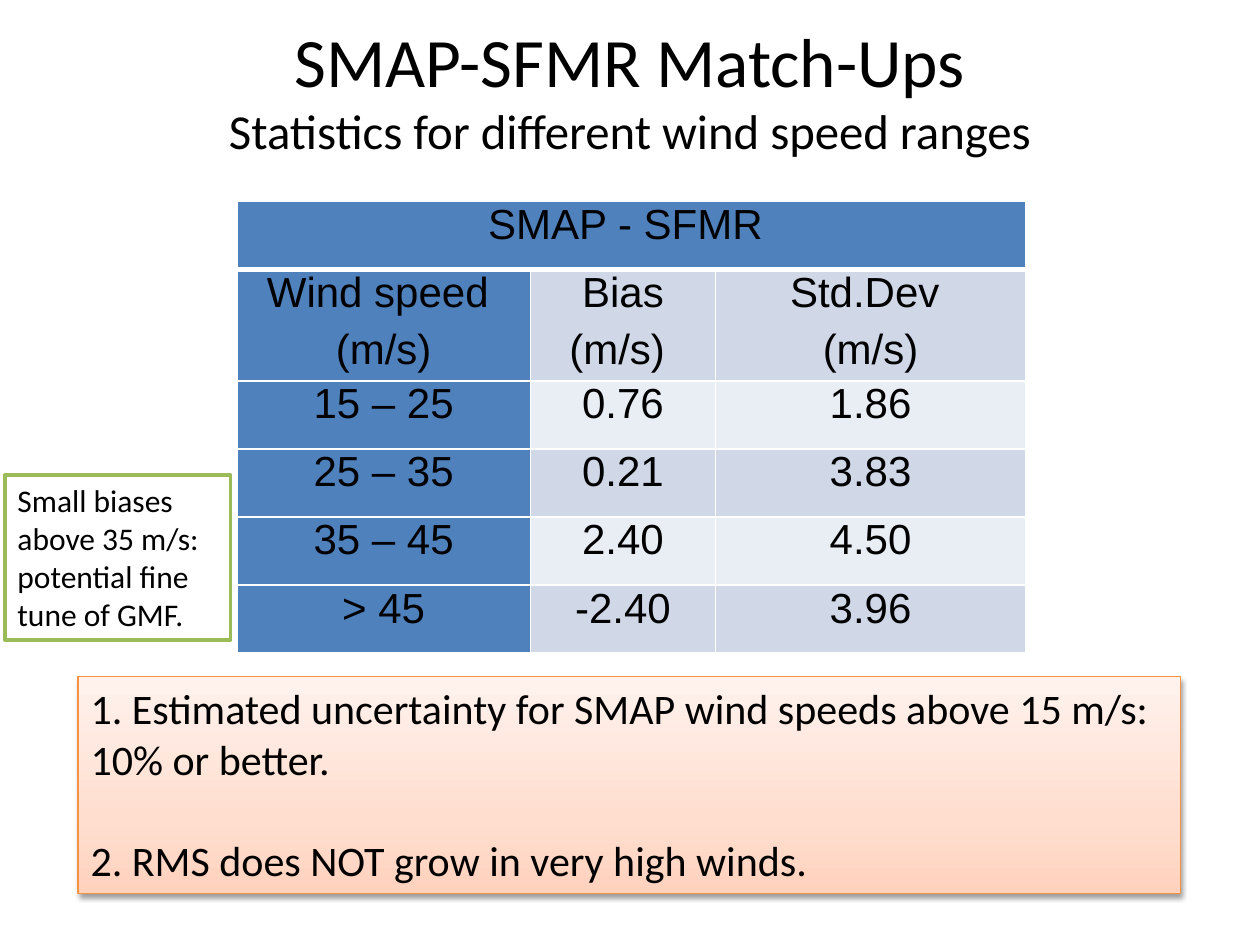
from lxml import etree
from pptx import Presentation
from pptx.dml.color import RGBColor
from pptx.enum.shapes import MSO_SHAPE
from pptx.enum.text import MSO_ANCHOR, PP_ALIGN
from pptx.oxml import parse_xml
from pptx.oxml.ns import nsdecls, qn
from pptx.util import Inches, Pt

BLACK = RGBColor(0x00, 0x00, 0x00)
WHITE = RGBColor(0xFF, 0xFF, 0xFF)
BLUE = RGBColor(0x4F, 0x81, 0xBD)
BAND_DARK = RGBColor(0xD0, 0xD8, 0xE8)
BAND_LIGHT = RGBColor(0xE9, 0xED, 0xF4)
ORANGE = RGBColor(0xF6, 0x92, 0x40)
GREEN = RGBColor(0x9B, 0xBB, 0x59)
PEACH_STOPS = [
    (0, RGBColor(0xFF, 0xD2, 0xBD)),
    (35, RGBColor(0xFF, 0xDE, 0xD0)),
    (100, RGBColor(0xFF, 0xF2, 0xED)),
]

COLUMN_WIDTHS = [2.33, 1.47, 2.46]
ROW_HEIGHTS = [0.54, 0.88, 0.54, 0.54, 0.54, 0.54]
STATISTICS = [
    ["SMAP - SFMR ", "", ""],
    ["Wind speed \n(m/s)", "Bias\n(m/s) ", "Std.Dev \n(m/s)"],
    ["15 – 25", "0.76", "1.86"],
    ["25 – 35", "0.21", "3.83"],
    ["35 – 45", "2.40", "4.50"],
    ["> 45", "-2.40", "3.96"],
]


def style(paragraph, size, font="Calibri", align=PP_ALIGN.LEFT):
    paragraph.alignment = align
    paragraph.font.size = Pt(size)
    paragraph.font.name = font
    paragraph.font.color.rgb = BLACK


def add_title(slide, heading, subheading):
    box = slide.shapes.add_textbox(Inches(0.5), Inches(0.08), Inches(9), Inches(1.25))
    frame = box.text_frame
    frame.word_wrap = True
    frame.vertical_anchor = MSO_ANCHOR.MIDDLE
    paragraph = frame.paragraphs[0]
    style(paragraph, 39.6, align=PP_ALIGN.CENTER)
    paragraph.add_run().text = heading
    paragraph.add_line_break()
    second_line = paragraph.add_run()
    second_line.text = subheading
    second_line.font.size = Pt(27.9)


def add_borders(cell, widths):
    """Draw white borders; widths are points for left, right, top, bottom."""
    properties = cell._tc.get_or_add_tcPr()
    for side, width in zip("LRTB", widths):
        properties.append(parse_xml(
            f'<a:ln{side} {nsdecls("a")} w="{Pt(width)}"><a:solidFill>'
            f'<a:srgbClr val="{WHITE}"/></a:solidFill></a:ln{side}>'))


def cell_fill(row, column):
    if row == 0 or column == 0:
        return BLUE
    return BAND_DARK if row % 2 else BAND_LIGHT


def fill_cell(cell, content, row, column):
    add_borders(cell, (1, 1, 3 if row == 1 else 1, 3 if row == 0 else 1))
    cell.fill.solid()
    cell.fill.fore_color.rgb = cell_fill(row, column)
    cell.margin_left = cell.margin_right = Inches(0.07)
    cell.margin_top = cell.margin_bottom = 0
    cell.text = content
    for paragraph in cell.text_frame.paragraphs:
        style(paragraph, 24, "Arial", PP_ALIGN.CENTER)
        paragraph.space_after = Pt(6)


def add_statistics(slide):
    table = slide.shapes.add_table(
        len(ROW_HEIGHTS), len(COLUMN_WIDTHS), Inches(1.88), Inches(1.6),
        Inches(sum(COLUMN_WIDTHS)), Inches(sum(ROW_HEIGHTS))).table
    table.first_row = table.horz_banding = False
    for column, width in zip(table.columns, COLUMN_WIDTHS):
        column.width = Inches(width)
    for row, height in zip(table.rows, ROW_HEIGHTS):
        row.height = Inches(height)
    for r, contents in enumerate(STATISTICS):
        for c, content in enumerate(contents):
            fill_cell(table.cell(r, c), content, r, c)
    table.cell(0, 0).merge(table.cell(0, 2))


def add_note(slide, left, top, width, height, lines, size, line_color, line_width):
    note = slide.shapes.add_shape(
        MSO_SHAPE.RECTANGLE, Inches(left), Inches(top), Inches(width), Inches(height))
    note.shadow.inherit = False
    note.fill.solid()
    note.fill.fore_color.rgb = WHITE
    note.line.color.rgb = line_color
    note.line.width = Pt(line_width)
    frame = note.text_frame
    frame.word_wrap = True
    frame.vertical_anchor = MSO_ANCHOR.TOP
    frame.text = "\n".join(lines)
    for paragraph in frame.paragraphs:
        style(paragraph, size)
    return note


def apply_gradient(shape, stops):
    """Fill upwards from the bottom edge."""
    shape.fill.gradient()
    shape.fill.gradient_angle = 90
    stop_list = shape._element.spPr.find(f".//{qn('a:gsLst')}")
    for stop in list(stop_list):
        stop_list.remove(stop)
    for position, color in stops:
        stop = etree.SubElement(stop_list, qn("a:gs"), pos=str(position * 1000))
        etree.SubElement(stop, qn("a:srgbClr"), val=str(color))


def apply_shadow(shape):
    effects = shape._element.spPr.find(qn("a:effectLst"))
    effects.append(parse_xml(
        f'<a:outerShdw {nsdecls("a")} blurRad="{Pt(3.1)}" dist="{Pt(1.6)}" '
        'dir="5400000" rotWithShape="0"><a:srgbClr val="000000">'
        '<a:alpha val="38000"/></a:srgbClr></a:outerShdw>'))


def main():
    prs = Presentation()
    prs.slide_width, prs.slide_height = Inches(10), Inches(7.5)
    slide = prs.slides.add_slide(prs.slide_layouts[6])

    add_title(slide, "SMAP-SFMR Match-Ups", "Statistics for different wind speed ranges")
    add_statistics(slide)

    conclusions = add_note(
        slide, 0.62, 5.37, 8.75, 1.72,
        ["1. Estimated uncertainty for SMAP wind speeds above 15 m/s:",
         "10% or better.",
         "2. RMS does NOT grow in very high winds."],
        24, ORANGE, 0.75)
    conclusions.text_frame.paragraphs[2].space_before = Pt(29)
    apply_gradient(conclusions, PEACH_STOPS)
    apply_shadow(conclusions)

    add_note(slide, 0.04, 3.77, 1.79, 1.31,
             ["Small biases above 35 m/s: potential fine tune of GMF."], 18, GREEN, 2)
    prs.save("out.pptx")


if __name__ == "__main__":
    main()
